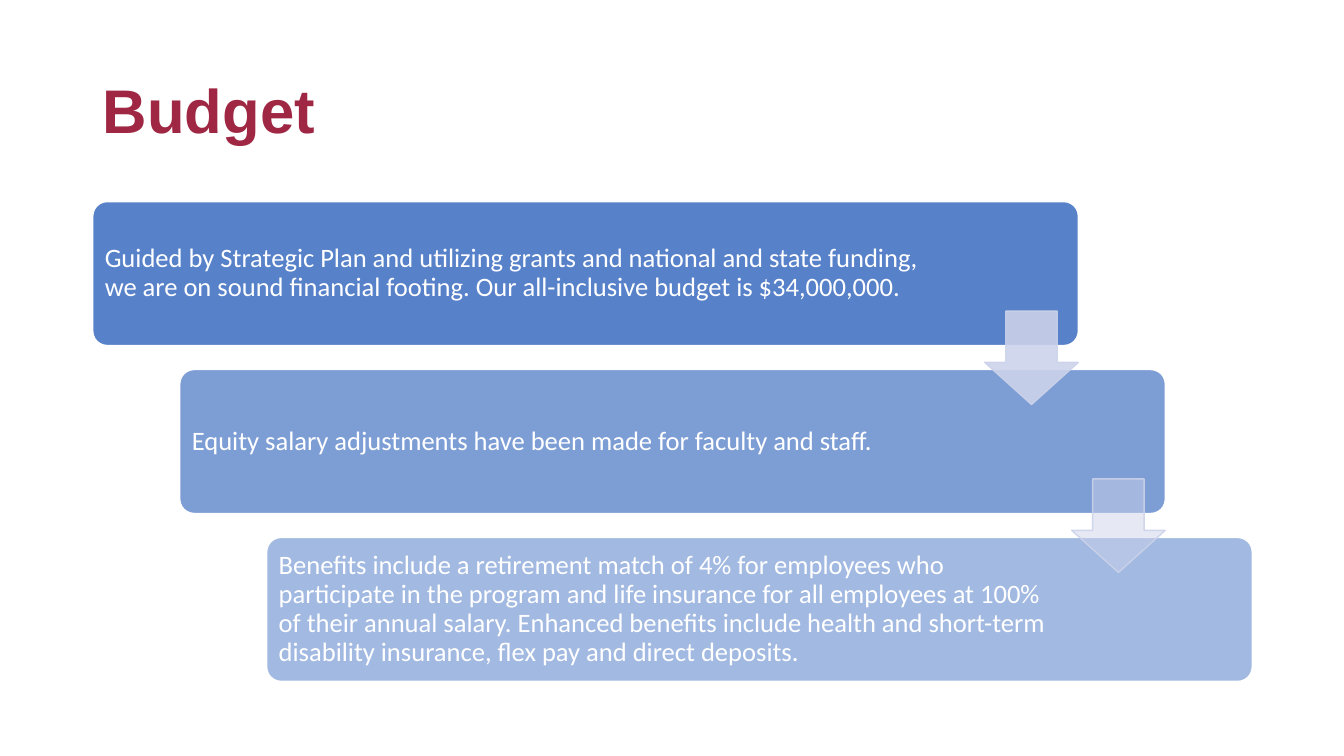
from dataclasses import dataclass

from lxml.etree import SubElement
from pptx import Presentation
from pptx.dml.color import RGBColor
from pptx.enum.shapes import MSO_SHAPE as Preset
from pptx.enum.text import MSO_ANCHOR as Anchor, MSO_AUTO_SIZE as AutoSize, PP_ALIGN as Align
from pptx.oxml.ns import qn
from pptx.util import Inches, Pt


@dataclass(frozen=True)
class Theme:
    heading: str = "9F2743"
    panel: str = "4372C3"
    arrow: str = "CCD3EA"
    white: str = "FFFFFF"
    heading_font: str = "Arial"
    body_font: str = "Calibri"
    heading_size: int = 44
    body_size: int = 19


# Body area in inches; panels and steps are shares of it.
LEFT, TOP, WIDTH, HEIGHT = 0.92, 2, 11.5, 4.76
PANEL_WIDTH, PANEL_HEIGHT = 0.85 * WIDTH, 0.3 * HEIGHT
STEP_X, STEP_Y = 0.15 * WIDTH / 2, 0.35 * HEIGHT
ARROW_SIZE = 0.65 * PANEL_HEIGHT
LABEL_MARGIN = 0.04

# Wording, panel opacity, label width
STEPS = [
    ("Guided by Strategic Plan and utilizing grants and national and state funding, "
     "we are on sound financial footing. Our all-inclusive budget is $34,000,000.", 89, 8.23),
    ("Equity salary adjustments have been made for faculty and staff.", 69, 7.9),
    ("Benefits include a retirement match of 4% for employees who participate in the "
     "program and life insurance for all employees at 100% of their annual salary. "
     "Enhanced benefits include health and short-term disability insurance, flex pay "
     "and direct deposits.", 49, 7.9),
]
ARROW_OPACITIES = [89, 49]


class StepSlide:
    """Holds the theme and the slide being built."""

    def __init__(self, page, theme):
        self.page = page
        self.theme = theme

    def set_text(self, box, text, font, size, color, insets, bold=False):
        frame = box.text_frame
        frame.word_wrap = True
        frame.auto_size = AutoSize.NONE
        frame.vertical_anchor = Anchor.MIDDLE
        frame.margin_left = frame.margin_right = Inches(insets[0])
        frame.margin_top = frame.margin_bottom = Inches(insets[1])
        para = frame.paragraphs[0]
        para.alignment = Align.LEFT
        para.line_spacing = 0.9
        span = para.add_run()
        span.text = text
        span.font.name = font
        span.font.size = Pt(size)
        span.font.bold = bold
        span.font.color.rgb = RGBColor.from_string(color)

    def title(self, text):
        box = self.page.shapes.title
        box.left, box.top, box.width, box.height = map(Inches, (LEFT, 0.4, WIDTH, 1.45))
        self.set_text(box, text, self.theme.heading_font, self.theme.heading_size,
                      self.theme.heading, (0.1, 0.05), bold=True)

    def shape(self, preset, place, adjustments, fill, line, opacities):
        """Draw a preset shape; opacities are the fill's and the line's, in percent."""
        shape = self.page.shapes.add_shape(preset, *map(Inches, place))
        shape.shadow.inherit = False
        for index, value in enumerate(adjustments):
            shape.adjustments[index] = value
        shape.fill.solid()
        shape.fill.fore_color.rgb = RGBColor.from_string(fill)
        shape.line.color.rgb = RGBColor.from_string(line)
        shape.line.width = Pt(1)
        for color, opacity in zip(shape.element.iter(qn("a:srgbClr")), opacities):
            SubElement(color, qn("a:alpha"), val=str(opacity * 1000))

    def panel(self, index, text, opacity, label_width):
        left, top = LEFT + index * STEP_X, TOP + index * STEP_Y
        self.shape(Preset.ROUNDED_RECTANGLE, (left, top, PANEL_WIDTH, PANEL_HEIGHT),
                   [0.1], self.theme.panel, self.theme.white, (opacity, 100))
        label = self.page.shapes.add_textbox(*map(Inches, (
            left + LABEL_MARGIN, top + LABEL_MARGIN,
            label_width, PANEL_HEIGHT - 2 * LABEL_MARGIN)))
        self.set_text(label, text, self.theme.body_font, self.theme.body_size,
                      self.theme.white, (0.08, 0.08))

    def arrow(self, index, opacity):
        left = LEFT + index * STEP_X + PANEL_WIDTH - ARROW_SIZE
        top = TOP + index * STEP_Y + 0.76 * PANEL_HEIGHT
        self.shape(Preset.DOWN_ARROW, (left, top, ARROW_SIZE, ARROW_SIZE),
                   [0.55, 0.45], self.theme.arrow, self.theme.arrow, (opacity, 89))


def main():
    deck = Presentation()
    deck.slide_width, deck.slide_height = Inches(13.33), Inches(7.5)
    slide = StepSlide(deck.slides.add_slide(deck.slide_layouts[5]), Theme())
    slide.title("Budget")
    for index, step in enumerate(STEPS):
        slide.panel(index, *step)
    for index, opacity in enumerate(ARROW_OPACITIES):
        slide.arrow(index, opacity)
    deck.save("out.pptx")


if __name__ == "__main__":
    main()
